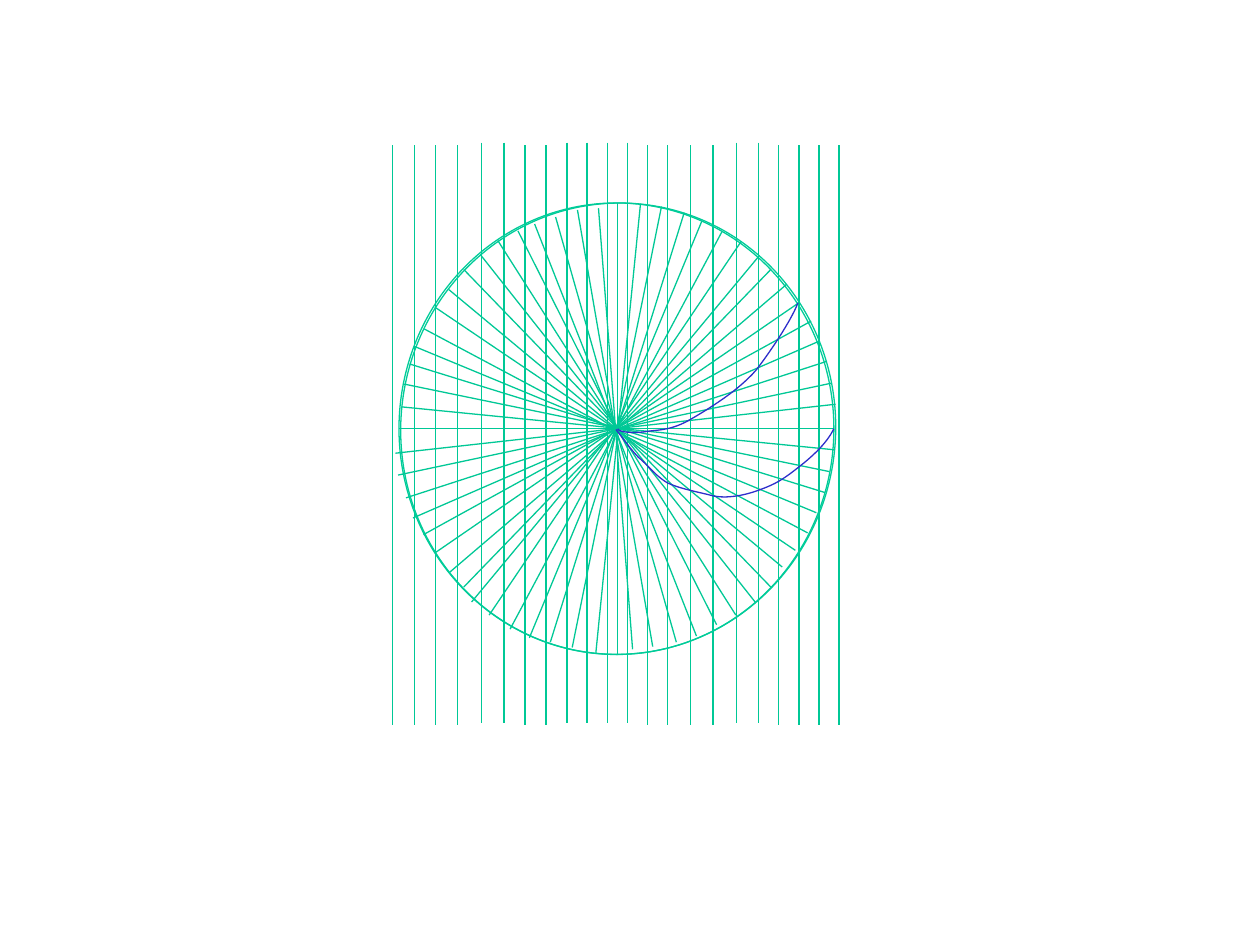
"""Draw a spoked circle over vertical rules, with two curves traced across it."""
import pptx
import pptx.enum.shapes
import pptx.util
import pptx.dml.color
import pptx.oxml.ns
import lxml.etree

Pt = pptx.util.Pt
COLORS = {"rule": "00C896", "circle": "00CC99", "curve": "2E2ECB"}
RULE_POSITIONS = [224.5, 237, 249, 261.5, 275, 288, 300, 312, 324, 335.5, 347,
                  358.5, 370, 381.5, 394.5, 407.5, 421, 433.5, 445, 456.5, 468, 479.5]
RAISED_RULES = {275, 288, 324, 335.5, 347, 358.5, 421, 433.5}
SPOKES = [
    (353, 116, 353, 373.5), (265, 154, 440.5, 335.5),
    (228, 245, 476.5, 245), (265, 335.5, 440.5, 154),
    (401, 126.5, 302.5, 364.5), (305.5, 128, 398, 363.5),
    (237, 198, 466.5, 293), (236, 296, 468, 195),
    (378, 118, 327, 370), (284.5, 137.5, 420.5, 351.5),
    (231, 219.5, 474, 269.5), (248.5, 316, 456.5, 173),
    (423.5, 138, 279.5, 351.5), (330, 120, 373, 369.5),
    (248.5, 175.5, 454.5, 314.5), (227.5, 271.5, 475, 219),
    (366, 116.5, 340.5, 373), (274.5, 145.5, 431.5, 344),
    (229.5, 232.5, 476.5, 257), (257, 327, 449.5, 162.5),
    (412.5, 132.5, 291.5, 359.5), (317.5, 124, 386.5, 367),
    (242.5, 188, 461.5, 304.5), (232, 284.5, 472.5, 206.5),
    (391, 121.5, 314.5, 367), (296, 132, 409.5, 357),
    (234, 208, 471.5, 281.5), (242, 305.5, 463.5, 183.5),
    (434, 146, 269.5, 344), (342, 119, 361.5, 371),
    (256.5, 165.5, 447, 324), (226, 259, 477.5, 231),
]
UPPER_CURVE = [(456, 173), (453, 181.5), (442, 198.5), (432.5, 211),
               (422.5, 223), (404.5, 234), (394, 240),
               (383.5, 246), (376.5, 245.5), (370, 246.5),
               (364.5, 247.5), (354, 247.5), (353, 245)]
LOWER_CURVE = [(476.5, 245), (474, 250.5), (468, 258), (457, 266.5),
               (446.5, 275), (442, 277), (434, 280),
               (426, 283), (416, 285), (408, 283.5),
               (400.5, 281.5), (389, 279.5), (381.5, 276),
               (374.5, 272), (370, 265.5), (365, 261.5),
               (360, 256.5), (355, 249), (352, 245.5)]


class Drawing:
    """Hold the line style and the current slide."""

    line_width = 0.75
    curve_steps = 12

    def __init__(self, slide):
        self.slide = slide

    def group(self):
        return self.slide.shapes.add_group_shape().shapes

    def style(self, shape, color):
        shape.line.color.rgb = pptx.dml.color.RGBColor.from_string(COLORS[color])
        shape.line.width = Pt(self.line_width)

    def line(self, shapes, left, top, right, bottom):
        connector = shapes.add_connector(
            pptx.enum.shapes.MSO_CONNECTOR.STRAIGHT, Pt(left), Pt(top), Pt(right), Pt(bottom))
        self.style(connector, "rule")
        properties = connector.element.spPr
        lxml.etree.SubElement(properties, pptx.oxml.ns.qn("a:effectLst"))

    def circle(self, shapes, left, top, width, height, rotation=0):
        shape = shapes.add_shape(
            pptx.enum.shapes.MSO_SHAPE.OVAL, Pt(left), Pt(top), Pt(width), Pt(height))
        shape.rotation = rotation
        shape.fill.background()
        shape.shadow.inherit = False
        self.style(shape, "circle")

    def curve(self, points):
        vertices = []
        for start in range(0, len(points) - 1, 3):
            for step in range(1, self.curve_steps + 1):
                t = step / self.curve_steps
                weights = ((1 - t) ** 3, 3 * t * (1 - t) ** 2, 3 * t * t * (1 - t), t ** 3)
                segment = points[start:start + 4]
                vertices.append(tuple(
                    Pt(sum(weight * point[axis] for weight, point in zip(weights, segment)))
                    for axis in (0, 1)))
        builder = self.slide.shapes.build_freeform(Pt(points[0][0]), Pt(points[0][1]))
        builder.add_line_segments(vertices, close=False)
        shape = builder.convert_to_shape()
        shape.fill.background()
        shape.shadow.inherit = False
        self.style(shape, "curve")


def main():
    presentation = pptx.Presentation()
    presentation.slide_width, presentation.slide_height = Pt(720), Pt(540)
    drawing = Drawing(presentation.slides.add_slide(presentation.slide_layouts[6]))

    rules = drawing.group()
    for position in RULE_POSITIONS:
        top, bottom = (81.5, 413) if position in RAISED_RULES else (83, 414)
        drawing.line(rules, position, top, position, bottom)

    wheel = drawing.group()
    drawing.circle(wheel, 228, 116, 248.5, 258)
    drawing.circle(wheel, 229, 116, 248.5, 258, rotation=5.6)
    for spoke in SPOKES:
        drawing.line(wheel, *spoke)

    for points in (UPPER_CURVE, LOWER_CURVE):
        drawing.curve(points)
    presentation.save("out.pptx")


if __name__ == "__main__":
    main()
